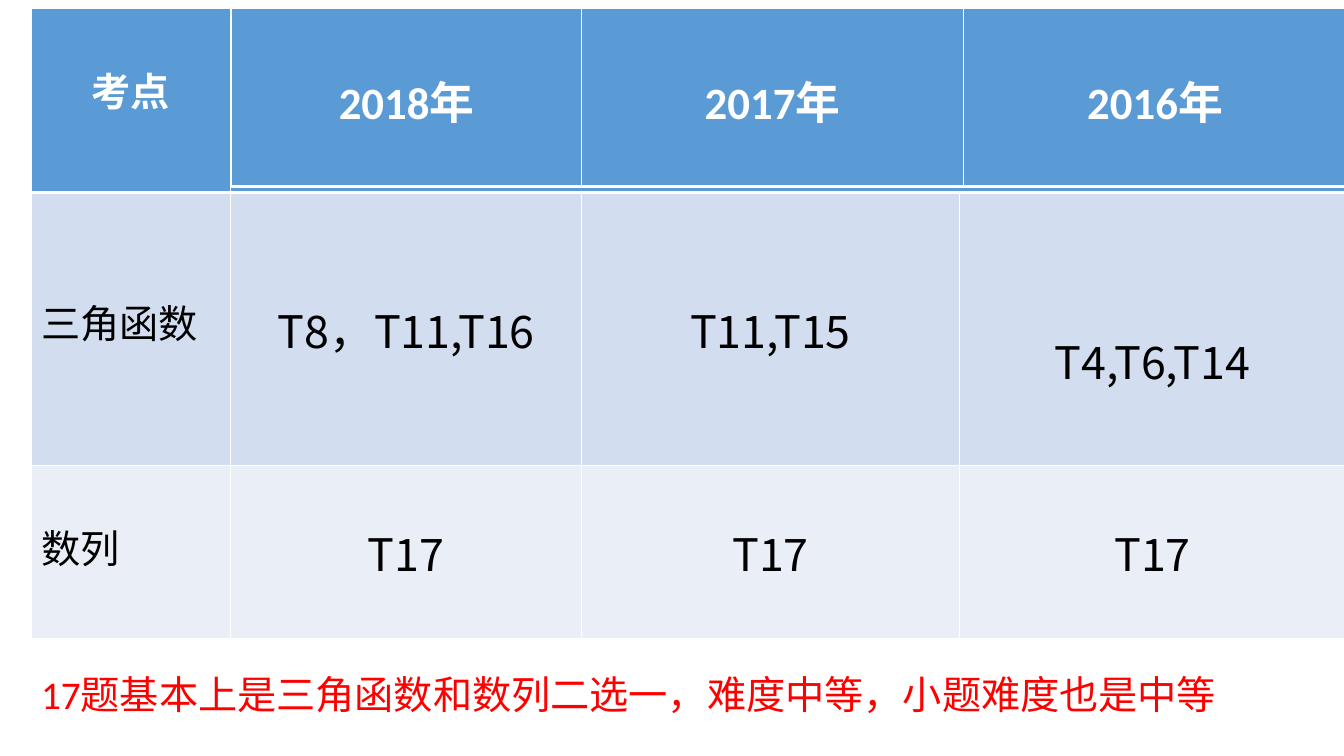
import pptx
import pptx.dml.color
import pptx.enum.text
import pptx.oxml
import pptx.oxml.ns
import pptx.util

Pt = pptx.util.Pt
RGBColor = pptx.dml.color.RGBColor
Align = pptx.enum.text.PP_ALIGN
Anchor = pptx.enum.text.MSO_ANCHOR

WHITE = RGBColor(0xFF, 0xFF, 0xFF)
BLACK = RGBColor(0, 0, 0)
RED = RGBColor(0xFF, 0, 0)
BLUE = RGBColor(0x5B, 0x9B, 0xD5)
BAND_DARK = RGBColor(0xD2, 0xDE, 0xEF)
BAND_LIGHT = RGBColor(0xEA, 0xEF, 0xF7)
LATIN, CJK = "Calibri", "Noto Sans CJK SC"

TOPIC_TITLE = "考点"
YEARS = ["2018年", "2017年", "2016年"]
# topic, its drop from the cell top, question numbers, row colour
TOPICS = [
    ("三角函数", 72, ["T8，T11,T16", "T11,T15", "T4,T6,T14"], BAND_DARK),
    ("数列", 37.8, ["T17", "T17", "T17"], BAND_LIGHT),
]
LOWERED = {"T4,T6,T14": 96.3}
SUMMARY = "17题基本上是三角函数和数列二选一，难度中等，小题难度也是中等"

LEFT, TOP = 22.32, 5.76
TOPIC_COLUMNS = [142.56, 250.56, 270, 275.76]
TOPIC_ROWS = [131.76, 195.12, 123.84]
YEAR_LEFT = 165.6
YEAR_COLUMNS = [249.84, 272.88, 273.6]
YEAR_ROWS = [127.44]
SUMMARY_BOX = (LEFT, 475.2, 915.84, 41.04)


def add_grid(page, left, columns, rows):
    frame = page.shapes.add_table(len(rows), len(columns), Pt(left), Pt(TOP),
                                  Pt(sum(columns)), Pt(sum(rows)))
    grid = frame.table
    for column, width in zip(grid.columns, columns):
        column.width = Pt(width)
    for row, height in zip(grid.rows, rows):
        row.height = Pt(height)
    return grid


def paint_cell(cell, color, bottom=1):
    """Fill a cell and give it white borders, the bottom one of its own width."""
    properties = cell._tc.get_or_add_tcPr()
    for side, width in (("L", 1), ("R", 1), ("T", 1), ("B", bottom)):
        properties.append(pptx.oxml.parse_xml(
            f'<a:ln{side} {pptx.oxml.ns.nsdecls("a")} w="{Pt(width)}">'
            f'<a:solidFill><a:srgbClr val="{WHITE}"/></a:solidFill></a:ln{side}>'))
    cell.fill.solid()
    cell.fill.fore_color.rgb = color


def write(frame, text, size, font, color, bold=False, align=Align.LEFT):
    frame.text = text
    para = frame.paragraphs[0]
    para.alignment = align
    for span in para.runs:
        span.font.size = Pt(size)
        span.font.name = font
        span.font.bold = bold
        span.font.color.rgb = color


def write_lowered(cell, drop, *style):
    cell.margin_top = Pt(drop)
    write(cell.text_frame, *style)


def write_centred(cell, *style):
    cell.vertical_anchor = Anchor.MIDDLE
    cell.margin_left = cell.margin_right = cell.margin_top = cell.margin_bottom = 0
    write(cell.text_frame, *style)


def add_topic_table(page):
    grid = add_grid(page, LEFT, TOPIC_COLUMNS, TOPIC_ROWS)
    for cell in grid.rows[0].cells:
        paint_cell(cell, BLUE, 3)
    grid.cell(0, 1).merge(grid.cell(0, 3))
    write_lowered(grid.cell(0, 0), 37.8, TOPIC_TITLE, 28, LATIN, WHITE, True, Align.CENTER)
    for row, (topic, drop, questions, color) in enumerate(TOPICS, 1):
        for cell in grid.rows[row].cells:
            paint_cell(cell, color)
        write_lowered(grid.cell(row, 0), drop, topic, 28, LATIN, BLACK)
        for column, question in enumerate(questions, 1):
            cell = grid.cell(row, column)
            style = (question, 32, CJK, BLACK, False, Align.CENTER)
            if question in LOWERED:
                write_lowered(cell, LOWERED[question], *style)
            else:
                write_centred(cell, *style)


def add_year_table(page):
    grid = add_grid(page, YEAR_LEFT, YEAR_COLUMNS, YEAR_ROWS)
    for cell, year in zip(grid.rows[0].cells, YEARS):
        paint_cell(cell, BLUE, 3)
        write_lowered(cell, 42.7, year, 32, LATIN, WHITE, True, Align.CENTER)


def main():
    deck = pptx.Presentation()
    deck.slide_width, deck.slide_height = Pt(960), Pt(540)
    page = deck.slides.add_slide(deck.slide_layouts[6])
    box = page.shapes.add_textbox(*map(Pt, SUMMARY_BOX))
    box.text_frame.word_wrap = True
    write(box.text_frame, SUMMARY, 28, LATIN, RED)
    add_topic_table(page)
    add_year_table(page)
    deck.save("out.pptx")


if __name__ == "__main__":
    main()
